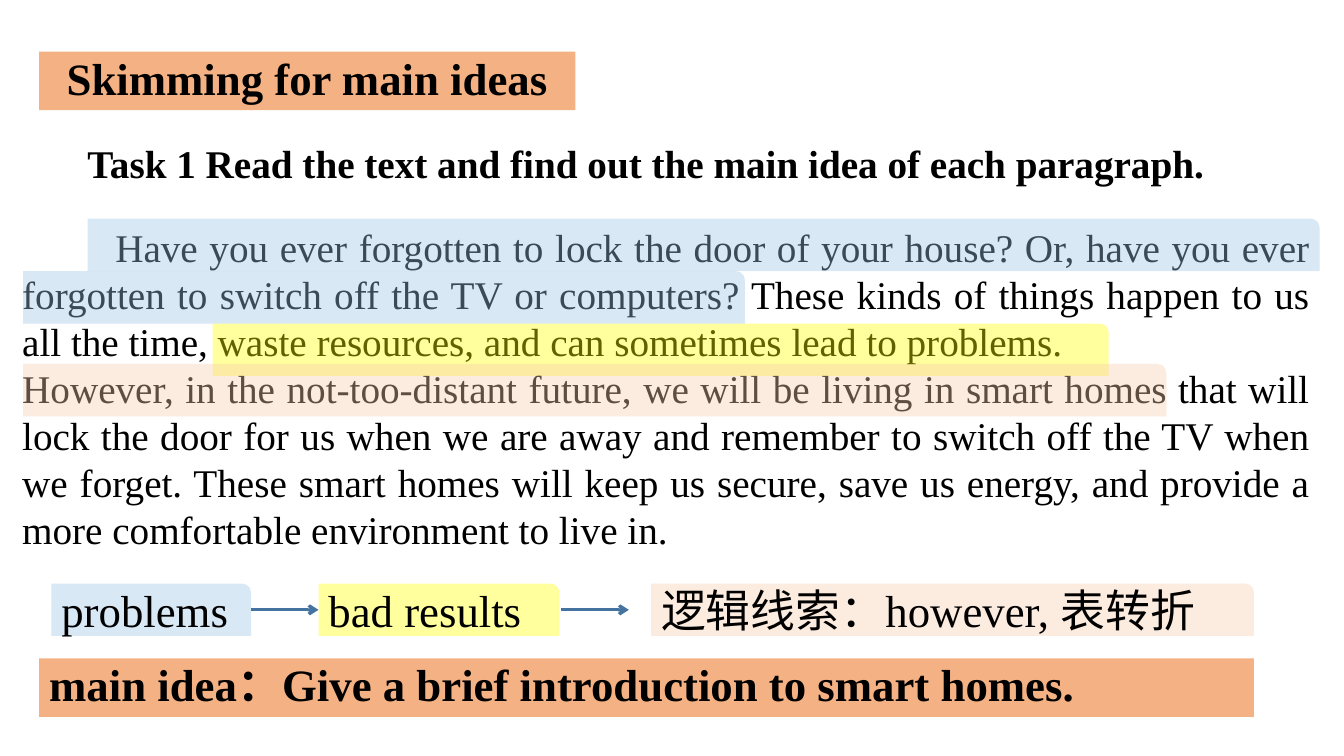
from lxml.etree import SubElement as Sub
from pptx import Presentation
from pptx.dml.color import RGBColor
from pptx.enum.shapes import MSO_CONNECTOR as Link, MSO_SHAPE as Kind
from pptx.enum.text import MSO_ANCHOR as Anchor, MSO_AUTO_SIZE as Auto, PP_ALIGN as Align
from pptx.oxml.ns import qn
from pptx.util import Pt


def paint(fill, color):
    fill.solid()
    fill.fore_color.rgb = RGBColor.from_string(color)


def write(shape, text, size=32, bold=False, align=Align.LEFT, anchor=Anchor.TOP, space=None, indent=0):
    frame = shape.text_frame
    frame.word_wrap = True
    frame.auto_size = Auto.NONE
    frame.vertical_anchor = anchor
    frame.text = text
    for i, para in enumerate(frame.paragraphs):
        para.alignment = align
        para.space_before = Pt(0)
        if space:
            para.line_spacing = space
        if indent and i == 0:
            para._p.get_or_add_pPr().set("indent", str(Pt(indent)))
        for run in para.runs:
            run.font.name = "Times New Roman"
            run.font.size = Pt(size)
            run.font.bold = bold
            paint(run.font.fill, "000000")


deck = Presentation()
deck.slide_width, deck.slide_height = Pt(960), Pt(540)
slide = deck.slides.add_slide(deck.slide_layouts[5])
shapes = slide.shapes

title = shapes.title
title.left, title.top, title.width, title.height = Pt(28), Pt(36.8), Pt(383), Pt(41.8)
paint(title.fill, "F4B183")
write(title, "Skimming for main ideas", bold=True, align=Align.CENTER, space=0.9)

task = shapes.add_textbox(Pt(55.4), Pt(95.8), Pt(862), Pt(41))
write(task, "Task 1 Read the text and find out the main idea of each paragraph.",
      size=28, bold=True, anchor=Anchor.MIDDLE)

story = (
    "Have you ever forgotten to lock the door of your house? Or, have you ever forgotten "
    "to switch off the TV or computers? These kinds of things happen to us all the time, "
    "waste resources, and can sometimes lead to problems.\n"
    "However, in the not-too-distant future, we will be living in smart homes that will "
    "lock the door for us when we are away and remember to switch off the TV when we forget. "
    "These smart homes will keep us secure, save us energy, and provide a more comfortable "
    "environment to live in."
)
body = shapes.add_textbox(Pt(8.8), Pt(156.2), Pt(933.8), Pt(244.8))
write(body, story, size=28, align=Align.JUSTIFY, space=Pt(33.6), indent=66.5)

blue, yellow, peach = "9DC3E6", "FFFF00", "F8CBAD"
marks = [
    (62.6, 156.2, 880, blue, ""),
    (16.6, 193.7, 515.5, blue, ""),
    (151.9, 231.1, 640, yellow, ""),
    (16.6, 260, 816.5, peach, ""),
    (36.7, 416.9, 142.6, blue, "problems"),
    (227.5, 416.9, 172.1, yellow, "bad results"),
    (465.1, 416.9, 430.6, peach, "逻辑线索：however, 表转折"),
]
for left, top, width, color, text in marks:
    mark = shapes.add_shape(Kind.ROUND_1_RECTANGLE, Pt(left), Pt(top), Pt(width), Pt(37.4))
    mark.shadow.inherit = False
    mark.line.fill.background()
    paint(mark.fill, color)
    tint = mark._element.spPr.find(qn("a:solidFill"))[0]
    Sub(tint, qn("a:alpha"), val="38000")
    if text:
        write(mark, text, anchor=Anchor.MIDDLE)

for left in (179.3, 401):
    arrow = shapes.add_connector(Link.STRAIGHT, Pt(left), Pt(435.6), Pt(left + 48.2), Pt(435.6))
    paint(arrow.line.fill, "43739E")
    arrow.line.width = Pt(2.25)
    props = arrow._element.spPr
    Sub(props.find(qn("a:ln")), qn("a:tailEnd"), type="arrow")
    Sub(props, qn("a:effectLst"))

idea = shapes.add_shape(Kind.RECTANGLE, Pt(28), Pt(470.2), Pt(867.6), Pt(41.8))
idea.shadow.inherit = False
idea.line.fill.background()
paint(idea.fill, "F4B183")
write(idea, "main idea：Give a brief introduction to smart homes.", bold=True, space=0.9)

deck.save("out.pptx")
